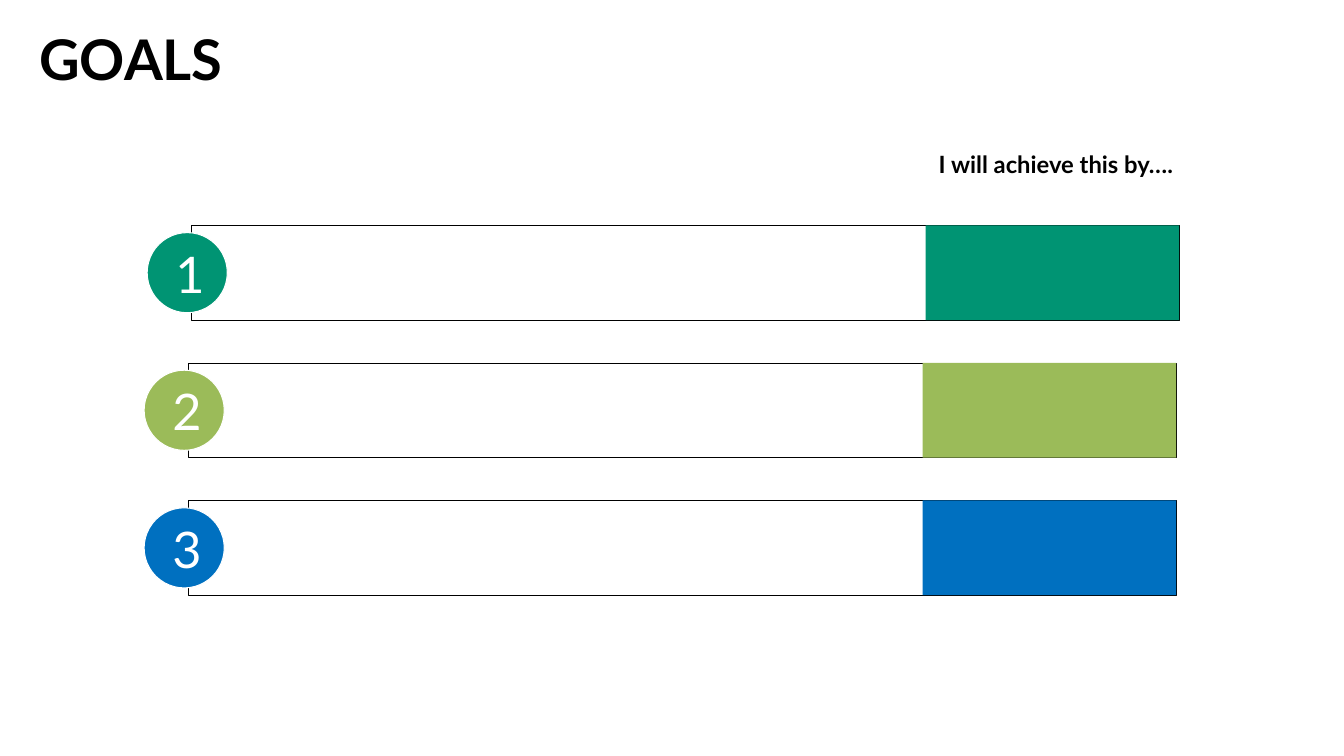
from pptx import Presentation
from pptx import util as u
from pptx.dml import color
from pptx.enum import shapes, text


def add_block(kind, left, top, width, height, fill, line=None, weight=0):
    shape = slide.shapes.add_shape(
        kind, u.Inches(left), u.Inches(top), u.Inches(width), u.Inches(height))
    shape.shadow.inherit = False
    shape.fill.solid()
    shape.fill.fore_color.rgb = color.RGBColor.from_string(fill)
    if line:
        shape.line.color.rgb = color.RGBColor.from_string(line)
        shape.line.width = u.Pt(weight)
    else:
        shape.line.fill.background()


def set_text(shape, words, size, ink, bold, align, inset_x, inset_y):
    frame = shape.text_frame
    frame.text = words
    frame.word_wrap = True
    frame.auto_size = text.MSO_AUTO_SIZE.NONE
    frame.vertical_anchor = text.MSO_ANCHOR.TOP
    frame.margin_left = frame.margin_right = u.Inches(inset_x)
    frame.margin_top = frame.margin_bottom = u.Inches(inset_y)
    paragraph = frame.paragraphs[0]
    paragraph.alignment = align
    font = paragraph.runs[0].font
    font.name, font.size, font.bold = "Lato", u.Pt(size), bold
    font.color.rgb = color.RGBColor.from_string(ink)


presentation = Presentation()
presentation.slide_width = u.Inches(26.67)
presentation.slide_height = u.Inches(15)
slide = presentation.slides.add_slide(presentation.slide_layouts[5])

title = slide.shapes.title
title.left, title.top = u.Inches(0.58), u.Inches(0.38)
title.width, title.height = u.Inches(25.04), u.Inches(1.41)
set_text(title, "GOALS", 80, "000000", True, text.PP_ALIGN.LEFT, 0.2, 0.1)

first_top, row_pitch = 4.47, 2.73
bar_width, bar_height = 19.61, 1.88
deadline_width = 5.03
badge_size = 1.59
goals = [(3.79, "009473"), (3.73, "9BBB59"), (3.73, "0070C0")]

for row, (left, accent) in enumerate(goals):
    top = first_top + row * row_pitch
    badge_left = left - 0.87
    badge_top = top + (bar_height - badge_size) / 2
    add_block(shapes.MSO_SHAPE.RECTANGLE, left, top, bar_width, bar_height,
              "FFFFFF", "000000", 0.75)
    add_block(shapes.MSO_SHAPE.RECTANGLE, left + bar_width - deadline_width, top,
              deadline_width, bar_height, accent)
    add_block(shapes.MSO_SHAPE.OVAL, badge_left, badge_top, badge_size, badge_size,
              accent, "FFFFFF", 1.5)
    number = slide.shapes.add_textbox(
        u.Inches(badge_left + 0.36), u.Inches(badge_top), u.Inches(0.87), u.Inches(0.97))
    set_text(number, str(row + 1), 72, "FFFFFF", False, text.PP_ALIGN.CENTER, 0.2, 0.2)

caption = slide.shapes.add_textbox(
    u.Inches(18.53), u.Inches(2.88), u.Inches(deadline_width), u.Inches(0.77))
set_text(caption, "I will achieve this by….", 34, "000000", True,
         text.PP_ALIGN.LEFT, 0.1, 0.1)

presentation.save("out.pptx")
